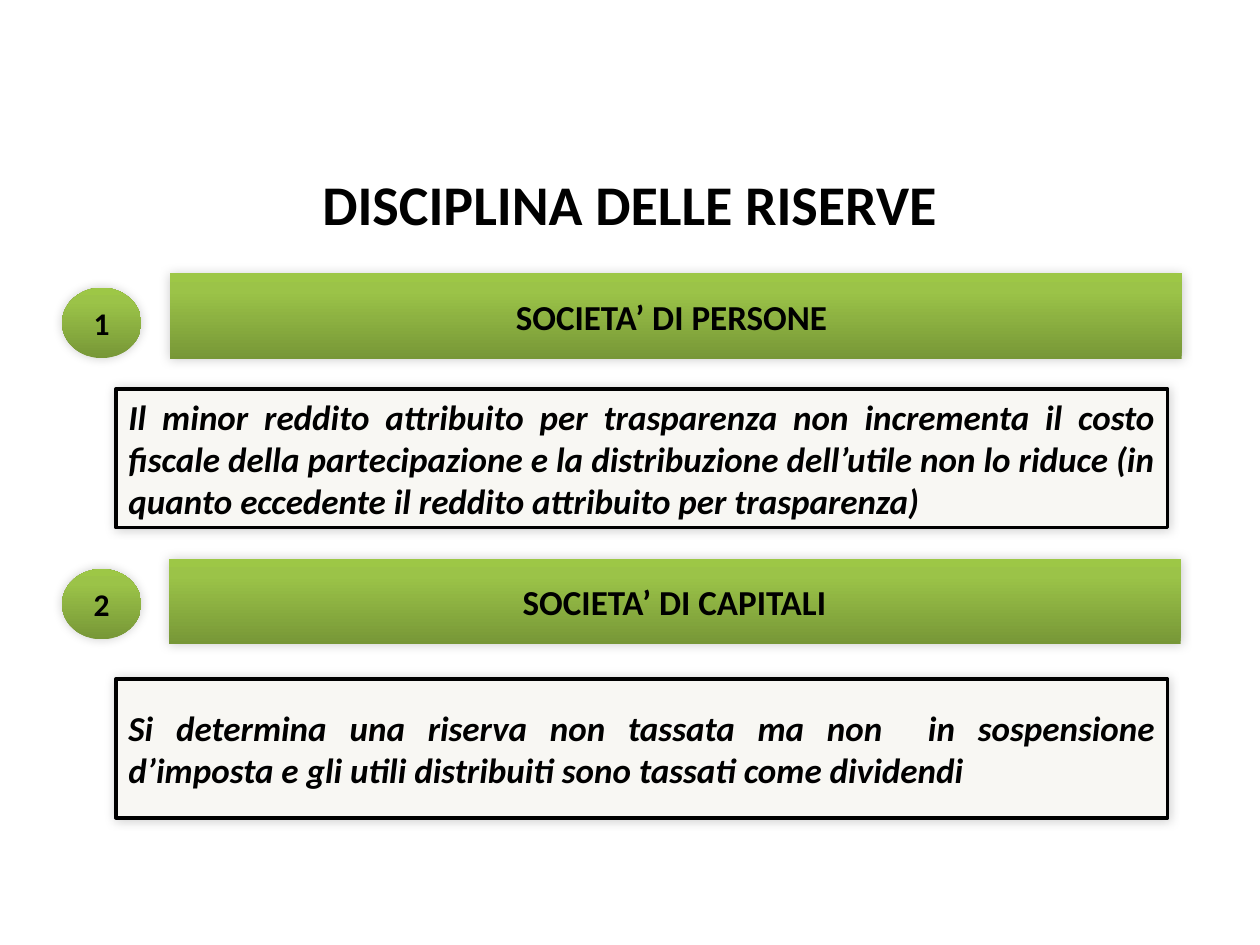
from copy import deepcopy

from lxml.etree import SubElement
from pptx import Presentation
from pptx.dml.color import RGBColor
from pptx.enum.shapes import MSO_SHAPE
from pptx.enum.text import MSO_ANCHOR, MSO_AUTO_SIZE, PP_ALIGN
from pptx.oxml.ns import qn
from pptx.util import Cm, Pt

COLORS = {
    "ink": "000000",
    "panel": "F8F7F3",
    "green_dark": "779737",
    "green_mid": "9BC348",
    "green_light": "9DC746",
}
GREEN_STOPS = [(0, "green_dark"), (0.8, "green_mid"), (1, "green_light")]


class ReserveSlide:
    """Style and drawing methods for the slide on the treatment of reserves."""

    font = "Calibri"

    def __init__(self, slide):
        self.slide = slide

    def color(self, name):
        return RGBColor.from_string(COLORS[name])

    def add_text(self, frame, text, size, align=PP_ALIGN.CENTER, italic=None):
        frame.word_wrap = True
        frame.auto_size = MSO_AUTO_SIZE.NONE
        frame.vertical_anchor = MSO_ANCHOR.MIDDLE
        paragraph = frame.paragraphs[0]
        paragraph.alignment = align
        run = paragraph.add_run()
        run.text = text
        run.font.name = self.font
        run.font.size = Pt(size)
        run.font.bold = True
        run.font.italic = italic
        run.font.color.rgb = self.color("ink")

    def title(self, text, left, top, width, height):
        heading = self.slide.shapes.title
        heading.left, heading.top = Cm(left), Cm(top)
        heading.width, heading.height = Cm(width), Cm(height)
        self.add_text(heading.text_frame, text, 32)

    def shadow(self, shape):
        shape.shadow.inherit = False
        effects = shape._element.spPr.find(qn("a:effectLst"))
        outer = SubElement(effects, qn("a:outerShdw"), blurRad=str(Pt(6)), dist="0",
                           dir=str(225 * 60000), algn="tl", rotWithShape="0")
        shade = SubElement(outer, qn("a:srgbClr"), val=COLORS["ink"])
        SubElement(shade, qn("a:alpha"), val="20000")

    def green(self, kind, text, size, left, top, width, height):
        shape = self.slide.shapes.add_shape(kind, Cm(left), Cm(top), Cm(width), Cm(height))
        shape.fill.gradient()
        shape.fill.gradient_angle = 90
        stop_list = shape._element.spPr.find(qn("a:gradFill")).find(qn("a:gsLst"))
        stop_list.append(deepcopy(stop_list[-1]))
        for stop, (position, name) in zip(shape.fill.gradient_stops, GREEN_STOPS):
            stop.position = position
            stop.color.rgb = self.color(name)
        shape.line.fill.background()
        self.shadow(shape)
        self.add_text(shape.text_frame, text, size)

    def badge(self, number, top):
        self.green(MSO_SHAPE.OVAL, number, 18, 1.25, top, 1.6, 1.42)

    def bar(self, text, left, top):
        self.green(MSO_SHAPE.RECTANGLE, text, 20, left, top, 20.4, 1.73)

    def panel(self, text, top):
        panel = self.slide.shapes.add_shape(
            MSO_SHAPE.RECTANGLE, Cm(2.34), Cm(top), Cm(21.2), Cm(2.8))
        panel.fill.solid()
        panel.fill.fore_color.rgb = self.color("panel")
        panel.line.color.rgb = self.color("ink")
        panel.line.width = Pt(2)
        self.shadow(panel)
        self.add_text(panel.text_frame, text, 20, PP_ALIGN.JUSTIFY, True)


def main():
    presentation = Presentation()
    presentation.slide_width, presentation.slide_height = Cm(25.4), Cm(19.05)
    reserves = ReserveSlide(presentation.slides.add_slide(presentation.slide_layouts[5]))
    reserves.title("DISCIPLINA DELLE RISERVE", 0, 3.28, 25.4, 1.63)
    reserves.badge("1", 5.8)
    reserves.bar("SOCIETA’ DI PERSONE ", 3.42, 5.51)
    reserves.bar("SOCIETA’ DI CAPITALI", 3.4, 11.26)
    reserves.badge("2", 11.47)
    reserves.panel(
        "Il minor reddito attribuito per trasparenza non incrementa il costo fiscale "
        "della partecipazione e la distribuzione dell’utile non lo riduce (in quanto "
        "eccedente il reddito attribuito per trasparenza)", 7.84)
    reserves.panel(
        "Si determina una riserva non tassata ma non  in sospensione d’imposta e gli "
        "utili distribuiti sono tassati come dividendi", 13.69)
    presentation.save("out.pptx")


if __name__ == "__main__":
    main()
